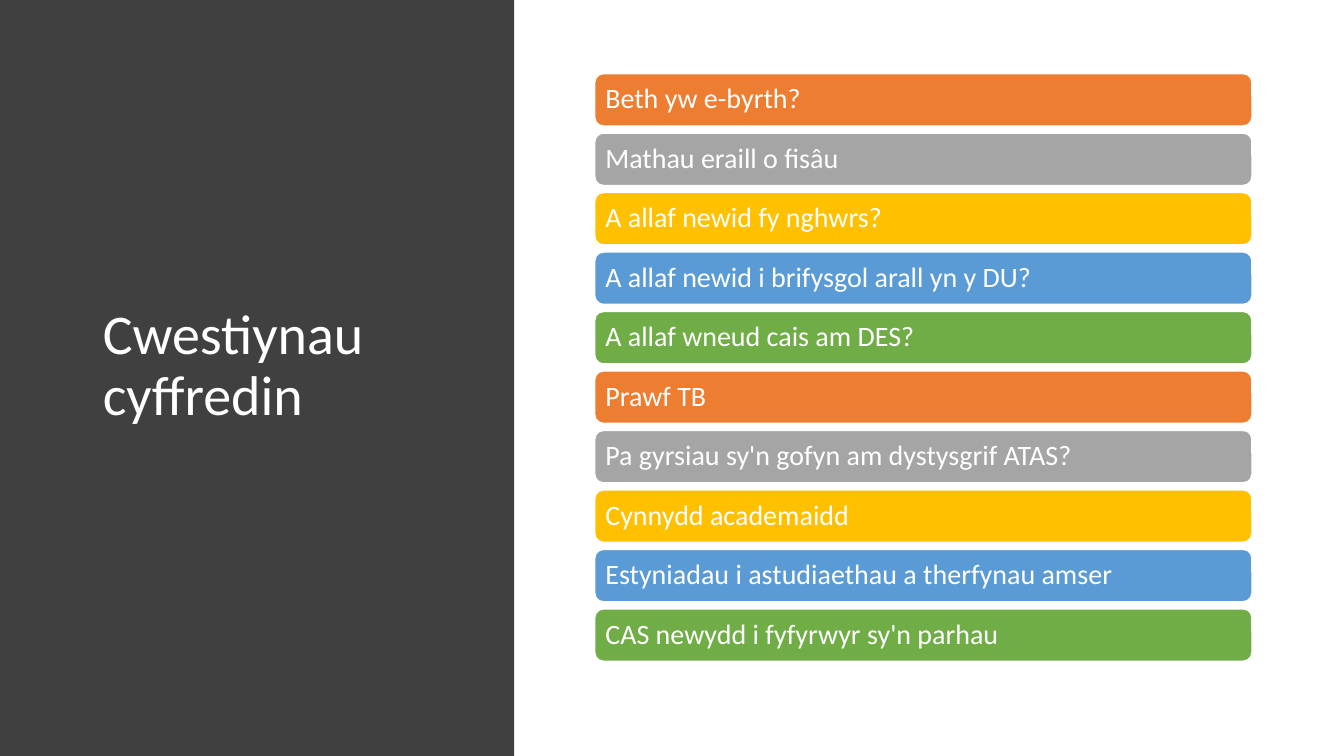
"""Build the slide of common questions: dark title panel and ten coloured bars."""
from itertools import cycle

from pptx import Presentation, util as u
from pptx.dml.color import RGBColor
from pptx.enum import shapes, text

WHITE, PANEL = "FFFFFF", "404040"
BAR_COLOURS = ["ED7D31", "A5A5A5", "FFC000", "5B9BD5", "70AD47"]
QUESTIONS = [
    "Beth yw e-byrth?",
    "Mathau eraill o fisâu",
    "A allaf newid fy nghwrs?",
    "A allaf newid i brifysgol arall yn y DU?",
    "A allaf wneud cais am DES?",
    "Prawf TB",
    "Pa gyrsiau sy'n gofyn am dystysgrif ATAS?",
    "Cynnydd academaidd",
    "Estyniadau i astudiaethau a therfynau amser",
    "CAS newydd i fyfyrwyr sy'n parhau",
]
LIST_LEFT, LIST_TOP, BAR_WIDTH, BAR_HEIGHT, ROW_STEP = 5.9, 0.73, 6.52, 0.52, 0.59


def paint(target, colour):
    target.solid()
    target.fore_color.rgb = RGBColor.from_string(colour)


def write(holder, wording, size, inset):
    frame = holder.text_frame
    frame.text = wording
    paragraph = frame.paragraphs[0]
    frame_format = {"word_wrap": True, "auto_size": text.MSO_AUTO_SIZE.NONE,
                    "vertical_anchor": text.MSO_ANCHOR.MIDDLE}
    for side in ("left", "top", "right", "bottom"):
        frame_format[f"margin_{side}"] = u.Inches(inset)
    paragraph_format = {"alignment": text.PP_ALIGN.LEFT, "line_spacing": 0.9}
    font_format = {"name": "Calibri", "size": u.Pt(size)}
    for part, values in ((frame, frame_format), (paragraph, paragraph_format),
                         (paragraph.runs[0].font, font_format)):
        for key, value in values.items():
            setattr(part, key, value)
    paint(paragraph.runs[0].font.fill, WHITE)


deck = Presentation()
deck.slide_width, deck.slide_height = u.Inches(13.333), u.Inches(7.5)
slide = deck.slides.add_slide(deck.slide_layouts[5])
paint(slide.background.fill, WHITE)

panel = slide.shapes.add_shape(shapes.MSO_SHAPE.RECTANGLE, 0, 0,
                               u.Inches(5.1), deck.slide_height)
panel.shadow.inherit = False
paint(panel.fill, PANEL)
panel.line.fill.background()

heading = slide.shapes.title
panel.element.getparent().insert(2, panel.element)
heading_place = {"left": 0.92, "top": 0.68, "width": 3.67, "height": 5.92}
for key, value in heading_place.items():
    setattr(heading, key, u.Inches(value))
write(heading, "Cwestiynau cyffredin", 40, 0.1)

for row, (question, colour) in enumerate(zip(QUESTIONS, cycle(BAR_COLOURS))):
    bar = slide.shapes.add_shape(
        shapes.MSO_SHAPE.ROUNDED_RECTANGLE,
        u.Inches(LIST_LEFT), u.Inches(LIST_TOP + row * ROW_STEP),
        u.Inches(BAR_WIDTH), u.Inches(BAR_HEIGHT))
    bar.shadow.inherit = False
    paint(bar.fill, colour)
    paint(bar.line.fill, WHITE)
    bar.line.width = u.Pt(1)
    write(bar, question, 20, 0.08)

deck.save("out.pptx")
